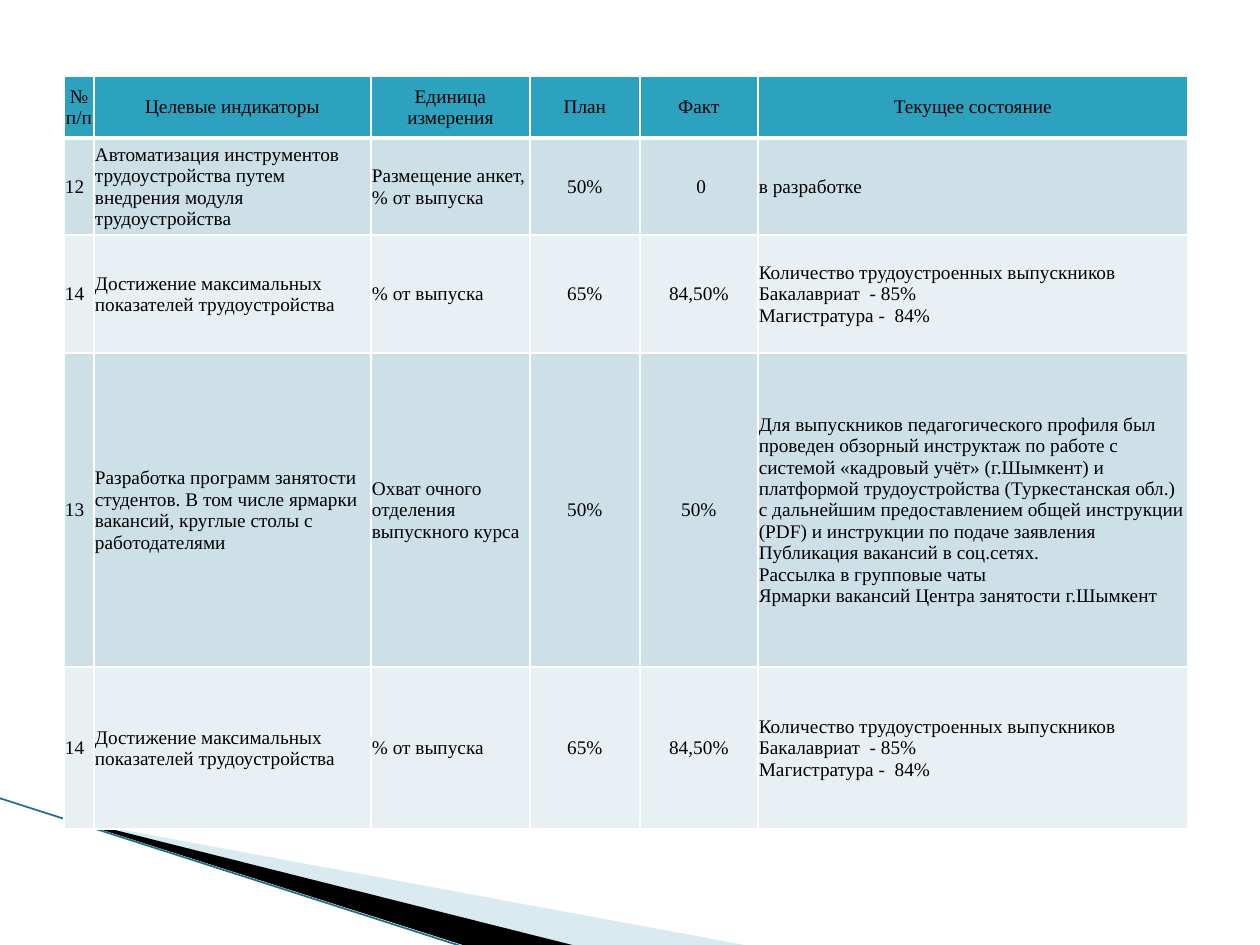
from dataclasses import dataclass
from typing import Optional

from lxml.etree import SubElement
from pptx import Presentation
from pptx.dml.color import RGBColor
from pptx.enum.shapes import MSO_CONNECTOR as Connector
from pptx.enum.text import MSO_ANCHOR as Anchor, PP_ALIGN as Align
from pptx.oxml import parse_xml
from pptx.oxml.ns import nsdecls, qn
from pptx.util import Emu, Pt

EMU_PER_PX = 914400 / 126
FONT = "Times New Roman"
WHITE = RGBColor(0xFF, 0xFF, 0xFF)
BLACK = RGBColor(0x00, 0x00, 0x00)
TEAL = RGBColor(0x2D, 0xA2, 0xBF)
DARK_TEAL = RGBColor(0x1B, 0x72, 0x88)
PALE_BLUE = RGBColor(0xA0, 0xCB, 0xDC)
BAND_DARK = RGBColor(0xCD, 0xE0, 0xE8)
BAND_LIGHT = RGBColor(0xE8, 0xF0, 0xF4)


@dataclass(frozen=True)
class Column:
    title: str
    width: int
    align: Align


@dataclass(frozen=True)
class Row:
    height: int
    texts: tuple[str, ...]


@dataclass(frozen=True)
class Wedge:
    points: tuple[tuple[int, int], ...]
    color: RGBColor
    opacity: Optional[int] = None


COLUMNS = (
    Column("№ п/п", 30, Align.JUSTIFY),
    Column("Целевые индикаторы", 277, Align.LEFT),
    Column("Единица измерения", 159, Align.LEFT),
    Column("План", 110, Align.CENTER),
    Column("Факт", 118, Align.CENTER),
    Column("Текущее состояние", 430, Align.LEFT),
)
EMPLOYMENT = (
    "14",
    "Достижение максимальных показателей трудоустройства",
    "% от выпуска",
    "65%",
    "84,50%",
    "Количество трудоустроенных выпускников\nБакалавриат  - 85%\nМагистратура -  84%",
)
ROWS = (
    Row(62, tuple(column.title for column in COLUMNS)),
    Row(97, (
        "12",
        "Автоматизация инструментов трудоустройства путем внедрения модуля трудоустройства",
        "Размещение анкет, % от выпуска",
        "50%",
        " 0",
        "в разработке",
    )),
    Row(118, EMPLOYMENT),
    Row(314, (
        "13",
        "Разработка программ занятости студентов. В том числе ярмарки вакансий, "
        "круглые столы с работодателями",
        "Охват очного отделения выпускного курса",
        "50%",
        "50%",
        "Для выпускников педагогического профиля был проведен обзорный инструктаж "
        "по работе с системой «кадровый учёт» (г.Шымкент) и платформой трудоустройства "
        "(Туркестанская обл.) с дальнейшим предоставлением общей инструкции (PDF) "
        "и инструкции по подаче заявления\nПубликация вакансий в соц.сетях.\n"
        "Рассылка в групповые чаты\nЯрмарки вакансий Центра занятости г.Шымкент",
    )),
    Row(162, EMPLOYMENT),
)
WEDGES = (
    Wedge(((69, 820), (750, 946), (575, 946), (69, 819)), PALE_BLUE, 40),
    Wedge(((67, 818), (576, 946), (469, 947), (68, 819)), BLACK),
)


def px(length: int) -> Emu:
    return Emu(round(length * EMU_PER_PX))


def add_wedge(slide, wedge: Wedge) -> None:
    builder = slide.shapes.build_freeform(*wedge.points[0], scale=EMU_PER_PX)
    builder.add_line_segments(wedge.points[1:], close=True)
    shape = builder.convert_to_shape()
    shape.shadow.inherit = False
    shape.line.fill.background()
    shape.fill.solid()
    shape.fill.fore_color.rgb = wedge.color
    if wedge.opacity is not None:
        color = shape.fill._xPr.find(qn("a:solidFill"))[0]
        SubElement(color, qn("a:alpha"), val=str(wedge.opacity * 1000))


def add_edge_line(slide) -> None:
    line = slide.shapes.add_connector(
        Connector.STRAIGHT, px(-1), px(798), px(467), px(948))
    line.line.color.rgb = DARK_TEAL
    line.line.width = Pt(1)
    SubElement(line._element.spPr, qn("a:effectLst"))


def set_borders(cell, top: int, bottom: int) -> None:
    properties = cell._tc.get_or_add_tcPr()
    for index, (side, width) in enumerate(zip("LRTB", (1, 1, top, bottom))):
        properties.insert(index, parse_xml(
            f'<a:ln{side} {nsdecls("a")} w="{Pt(width)}"><a:solidFill>'
            f'<a:srgbClr val="{WHITE}"/></a:solidFill></a:ln{side}>'))


def fill_cell(cell, text: str, align: Align, color: RGBColor) -> None:
    cell.fill.solid()
    cell.fill.fore_color.rgb = color
    cell.vertical_anchor = Anchor.MIDDLE
    cell.margin_left = cell.margin_right = cell.margin_top = px(1)
    cell.margin_bottom = 0
    paragraph = cell.text_frame.paragraphs[0]
    paragraph.alignment = align
    for index, line in enumerate(text.split("\n")):
        if index:
            paragraph.add_line_break()
        run = paragraph.add_run()
        run.text = line
        run.font.name = FONT
        run.font.size = Pt(11)
        run.font.bold = False
        run.font.color.rgb = BLACK


def add_indicator_table(slide) -> None:
    width = sum(column.width for column in COLUMNS)
    height = sum(row.height for row in ROWS)
    table = slide.shapes.add_table(
        len(ROWS), len(COLUMNS), px(64), px(76), px(width), px(height)).table
    for index, column in enumerate(COLUMNS):
        table.columns[index].width = px(column.width)
    for row_index, row in enumerate(ROWS):
        table.rows[row_index].height = px(row.height)
        is_header = row_index == 0
        color = TEAL if is_header else (BAND_LIGHT, BAND_DARK)[row_index % 2]
        for column_index, (column, text) in enumerate(zip(COLUMNS, row.texts)):
            cell = table.cell(row_index, column_index)
            fill_cell(cell, text, Align.CENTER if is_header else column.align, color)
            set_borders(cell, 3 if row_index == 1 else 1, 3 if is_header else 1)


def main() -> None:
    """Build the slide with the employment indicator table."""
    presentation = Presentation()
    presentation.slide_width = px(1260)
    presentation.slide_height = px(945)
    slide = presentation.slides.add_slide(presentation.slide_layouts[6])
    for wedge in WEDGES:
        add_wedge(slide, wedge)
    add_edge_line(slide)
    add_indicator_table(slide)
    presentation.save("out.pptx")


if __name__ == "__main__":
    main()
